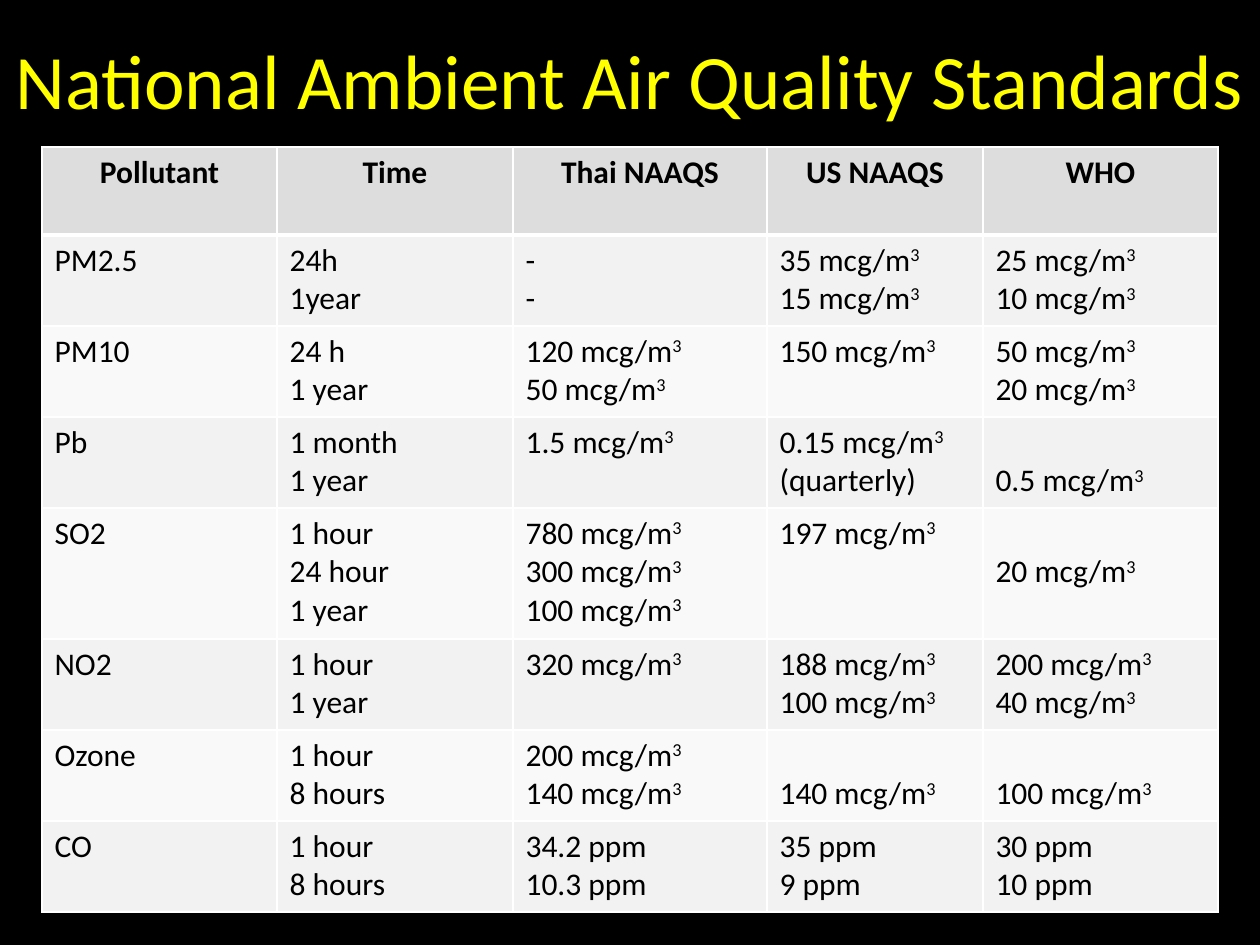
from pptx import Presentation
from pptx.dml.color import RGBColor
from pptx.enum.text import MSO_ANCHOR, PP_ALIGN
from pptx.oxml.ns import qn
from pptx.util import Pt
from lxml.etree import SubElement

FONT = "Calibri"
HEADINGS = ["Pollutant", "Time", "Thai NAAQS", "US NAAQS", "WHO"]
STANDARDS = [
    ["PM2.5", "24h\n1year", "-\n-", "35 mcg/m³\n15 mcg/m³", "25 mcg/m³\n10 mcg/m³"],
    ["PM10", "24 h\n1 year", "120 mcg/m³\n50 mcg/m³", "150 mcg/m³", "50 mcg/m³\n20 mcg/m³"],
    ["Pb", "1 month\n1 year", "1.5 mcg/m³", "0.15 mcg/m³\n(quarterly)", "0.5 mcg/m³"],
    ["SO2", "1 hour\n24 hour\n1 year", "780 mcg/m³\n300 mcg/m³\n100 mcg/m³", "197 mcg/m³", "20 mcg/m³"],
    ["NO2", "1 hour\n1 year", "320 mcg/m³", "188 mcg/m³\n100 mcg/m³", "200 mcg/m³\n40 mcg/m³"],
    ["Ozone", "1 hour\n8 hours", "200 mcg/m³\n140 mcg/m³", "140 mcg/m³", "100 mcg/m³"],
    ["CO", "1 hour\n8 hours", "34.2 ppm\n10.3 ppm", "35 ppm\n9 ppm", "30 ppm\n10 ppm"],
]
SECOND_LINE_CELLS = {(3, 4), (4, 4), (6, 3), (6, 4)}
COLUMN_WIDTHS = [235, 236, 254, 216, 235]
HEADER_HEIGHT = 88
ROW_HEIGHTS = {2: 91, 3: 131}
SECOND_LINE_MARGIN = 45


def px(length):
    return round(length * 914400 / 126)


def color(value):
    return RGBColor.from_string(value)


def style_font(font, size, value, bold=False):
    font.name = FONT
    font.size = Pt(size)
    font.bold = bold
    font.color.rgb = color(value)


def add_title(page, left, top, width, height):
    title = page.shapes.title
    title.left, title.top, title.width, title.height = map(px, (left, top, width, height))
    frame = title.text_frame
    frame.text = "National Ambient Air Quality Standards"
    frame.vertical_anchor = MSO_ANCHOR.MIDDLE
    para = frame.paragraphs[0]
    para.alignment = PP_ALIGN.CENTER
    style_font(para.runs[0].font, 44, "FFFF00")


def set_borders(cell, top, bottom):
    properties = cell._tc.get_or_add_tcPr()
    for side, width in (("L", 1), ("R", 1), ("T", top), ("B", bottom)):
        line = SubElement(properties, qn(f"a:ln{side}"), w=str(Pt(width)))
        fill = SubElement(line, qn("a:solidFill"))
        SubElement(fill, qn("a:srgbClr"), val="FFFFFF")


def fill_cell(cell, text, is_header):
    cell.text_frame.text = text.replace("³", "")
    for para, line in zip(cell.text_frame.paragraphs, text.split("\n")):
        para.alignment = PP_ALIGN.CENTER if is_header else PP_ALIGN.LEFT
        if line.endswith("³"):
            exponent = para.add_run()
            exponent.text = "3"
            exponent._r.get_or_add_rPr().set("baseline", "30000")
        for span in para.runs:
            style_font(span.font, 18, "000000", is_header)


def add_standards_table(page, left, top):
    rows = [HEADINGS] + STANDARDS
    heights = [HEADER_HEIGHT] + [
        ROW_HEIGHTS[row[1].count("\n") + 1] for row in STANDARDS
    ]
    frame = page.shapes.add_table(
        len(rows), len(HEADINGS), px(left), px(top),
        px(sum(COLUMN_WIDTHS)), px(sum(heights)),
    )
    table = frame.table
    for column, width in zip(table.columns, COLUMN_WIDTHS):
        column.width = px(width)
    for row_index, (texts, height) in enumerate(zip(rows, heights)):
        table.rows[row_index].height = px(height)
        is_header = row_index == 0
        shade = "DDDDDD" if is_header else ("F9F9F9", "F2F2F2")[row_index % 2]
        for column_index, text in enumerate(texts):
            cell = table.cell(row_index, column_index)
            set_borders(cell, 3 if row_index == 1 else 1, 3 if is_header else 1)
            cell.fill.solid()
            cell.fill.fore_color.rgb = color(shade)
            fill_cell(cell, text, is_header)
            if (row_index, column_index) in SECOND_LINE_CELLS:
                cell.margin_top = px(SECOND_LINE_MARGIN)


def main():
    deck = Presentation()
    deck.slide_width, deck.slide_height = px(1260), px(945)
    page = deck.slides.add_slide(deck.slide_layouts[5])
    page.background.fill.solid()
    page.background.fill.fore_color.rgb = color("000000")
    add_title(page, 0, 0, 1260, 158)
    add_standards_table(page, 42, 147)
    deck.save("out.pptx")


if __name__ == "__main__":
    main()
